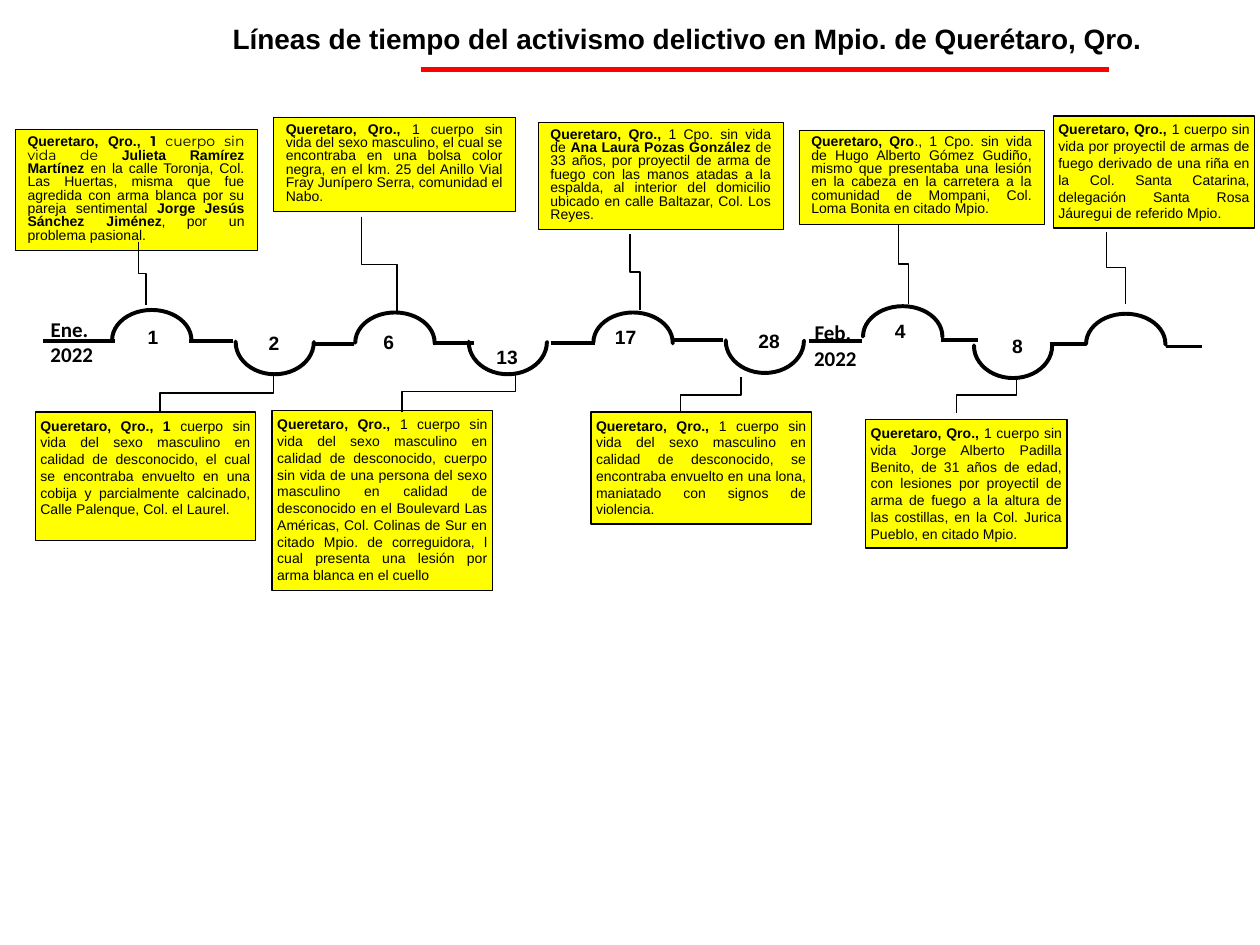
from dataclasses import dataclass
from typing import NamedTuple

from lxml.etree import SubElement
from pptx import Presentation
from pptx.dml.color import RGBColor
from pptx.enum.shapes import MSO_CONNECTOR, MSO_SHAPE
from pptx.enum.text import MSO_ANCHOR, PP_ALIGN
from pptx.oxml.ns import qn
from pptx.util import Inches, Pt


@dataclass(frozen=True)
class Theme:
    ink: RGBColor = RGBColor(0, 0, 0)
    card: RGBColor = RGBColor(0xFF, 0xFF, 0)
    accent: RGBColor = RGBColor(0xFF, 0, 0)
    body: str = "Arial"
    month: str = "Calibri"
    alternate: str = "Montserrat"
    title_size: float = 16
    day_size: float = 11
    month_size: float = 12
    event_size: float = 8
    rule_line: float = 3
    wave_line: float = 2.25
    thin_line: float = 0.75
    hair_line: float = 0.25


THEME = Theme()
COLUMNS, ROWS = 100, 75
WIDTH, HEIGHT = Inches(10), Inches(7.5)


class Run(NamedTuple):
    text: str
    bold: bool = False
    font: str = THEME.body


class Card(NamedTuple):
    box: tuple
    runs: tuple
    compact: bool = False


PLACE = Run("Queretaro, Qro., ", True)

CARDS = [
    Card((1.2, 10.3, 19.2, 9.6), (
        PLACE,
        Run("1", True, THEME.alternate),
        Run(" cuerpo sin vida de ", False, THEME.alternate),
        Run("Julieta Ramírez Martínez", True),
        Run(" en la calle Toronja, Col. Las Huertas, misma que fue agredida con arma "
            "blanca por su pareja sentimental "),
        Run("Jorge Jesús Sánchez Jiménez", True),
        Run(", ", False, THEME.alternate),
        Run("por un problema pasional.")), True),
    Card((21.7, 9.3, 19.2, 7.5), (
        PLACE,
        Run("1 cuerpo sin vida del sexo masculino, el cual se encontraba en una bolsa color "
            "negra, en el km. 25 del Anillo Vial Fray Junípero Serra, comunidad el Nabo.")), True),
    Card((42.7, 9.7, 19.5, 8.5), (
        PLACE,
        Run("1 Cpo. sin vida de "),
        Run("Ana Laura Pozas González", True),
        Run(" de 33 años, por proyectil de arma de fuego con las manos atadas a la espalda, "
            "al interior del domicilio ubicado en calle Baltazar, Col. Los Reyes.")), True),
    Card((63.4, 10.3, 19.5, 7.5), (
        Run("Queretaro, Qro", True),
        Run("., 1 Cpo. sin vida de Hugo Alberto Gómez Gudiño, mismo que presentaba una "
            "lesión en la cabeza en la carretera a la comunidad de Mompani, Col. Loma "
            "Bonita en citado Mpio.")), True),
    Card((83.6, 9.2, 16, 8.9), (
        PLACE,
        Run("1 cuerpo sin vida por proyectil de armas de fuego derivado de una riña en la "
            "Col. Santa Catarina, delegación Santa Rosa Jáuregui de referido Mpio."))),
    Card((2.8, 32.7, 17.5, 10.2), (
        Run("Queretaro, Qro., 1", True),
        Run(" cuerpo sin vida del sexo masculino en calidad de desconocido, el cual se "
            "encontraba envuelto en una cobija y parcialmente calcinado, Calle Palenque, "
            "Col. el Laurel."))),
    Card((21.6, 32.6, 17.5, 14.3), (
        PLACE,
        Run("1 cuerpo sin vida del sexo masculino en calidad de desconocido, cuerpo sin vida "
            "de una persona del sexo masculino en calidad de desconocido en el Boulevard Las "
            "Américas, Col. Colinas de Sur en citado Mpio. de correguidora, l cual presenta "
            "una lesión por arma blanca en el cuello"))),
    Card((46.9, 32.7, 17.5, 8.9), (
        PLACE,
        Run("1 cuerpo sin vida del sexo masculino en calidad de desconocido, se encontraba "
            "envuelto en una lona, maniatado con signos de violencia."))),
    Card((68.7, 33.3, 16, 10.2), (
        PLACE,
        Run("1 cuerpo sin vida Jorge Alberto Padilla Benito, de 31 años de edad, con lesiones "
            "por proyectil de arma de fuego a la altura de las costillas, en la Col. Jurica "
            "Pueblo, en citado Mpio."))),
]

# Left column and top row
CRESTS = [(8.9, 24.6), (28.2, 24.8), (47.1, 24.8), (68.5, 24.3), (86.2, 24.9)]
TROUGHS = [(18.7, 24.6), (37.2, 24.6), (57.6, 24.5), (77.3, 24.9)]
DAYS = [("1", 8.6, 25.4), ("2", 18.2, 25.9), ("6", 27.3, 25.8), ("13", 36.7, 27),
        ("17", 46.1, 25.4), ("28", 57.5, 25.7), ("4", 67.9, 24.9), ("8", 77.2, 26.1)]
MONTHS = [("Ene. ", 1.2, 24.6), ("Feb. ", 61.8, 24.9)]

# Start column, end column, row
LINKS = [(3.4, 9.1, 27.1), (15, 18.5, 27.1), (24.9, 28.1, 27.3), (34.4, 37.6, 27.2),
         (43.7, 47.2, 27.2), (53.5, 57.4, 27), (64.2, 68.4, 27.1), (74.7, 77.6, 27),
         (83.3, 86.2, 27.3), (92.5, 95.4, 27.5)]

# Upper end, then lower end
LEADERS = [(11, 19.2, 11.6, 24.2), (28.7, 17.2, 31.5, 24.8), (50, 18.6, 50.8, 24.6),
           (71.3, 17.8, 72.1, 24.1), (87.8, 18.4, 89.3, 24.1), (21.7, 29.6, 12.7, 32.8),
           (40.9, 29.5, 31.9, 32.7), (58.8, 29.9, 54, 32.8), (80.7, 29.9, 75.9, 32.8)]


def col(count):
    return round(WIDTH * count / COLUMNS)


def row(count):
    return round(HEIGHT * count / ROWS)


def area(left, top, width, height):
    return col(left), row(top), col(width), row(height)


def write(shape, paragraphs, *, size, align=PP_ALIGN.CENTER, inset=(0.04, 0.04), spacing=None):
    """Fill a shape with paragraphs, each a sequence of Run; inset is (sides, ends) in inches."""
    frame = shape.text_frame
    frame.word_wrap = True
    frame.vertical_anchor = MSO_ANCHOR.TOP
    frame.margin_left = frame.margin_right = Inches(inset[0])
    frame.margin_top = frame.margin_bottom = Inches(inset[1])
    for index, runs in enumerate(paragraphs):
        paragraph = frame.add_paragraph() if index else frame.paragraphs[0]
        paragraph.alignment = align
        paragraph.space_before = Pt(0)
        paragraph.line_spacing = spacing
        for item in runs:
            run = paragraph.add_run()
            run.text = item.text
            run.font.size = Pt(size)
            run.font.bold = item.bold
            run.font.name = item.font
            run.font.color.rgb = THEME.ink


def add_title(slide, text):
    title = slide.shapes.title
    title.left, title.top, title.width, title.height = area(12.4, 1.7, 84.3, 2.7)
    write(title, [[Run(text, True)]], size=THEME.title_size, inset=(0, 0), spacing=1)


def add_label(slide, box, paragraphs, **style):
    write(slide.shapes.add_textbox(*area(*box)), paragraphs, **style)


def add_line(slide, kind, ends, color, weight):
    line = slide.shapes.add_connector(kind, *ends)
    line.line.color.rgb = color
    line.line.width = Pt(weight)
    SubElement(line._element.spPr, qn("a:effectLst"))
    return line


def add_level(slide, start, end, level, color=THEME.ink, weight=THEME.wave_line):
    ends = col(start), row(level), col(end), row(level)
    add_line(slide, MSO_CONNECTOR.STRAIGHT, ends, color, weight)


def add_leader(slide, x1, y1, x2, y2):
    """Elbow that leaves and arrives vertically: a horizontal one turned about its centre."""
    run, drop = col(abs(x2 - x1)), row(y2 - y1)
    left = col((x1 + x2) / 2) - drop // 2
    top = row((y1 + y2) / 2) - run // 2
    leader = add_line(slide, MSO_CONNECTOR.ELBOW, (left, top, left + drop, top + run),
                      THEME.ink, THEME.thin_line)
    xfrm = leader._element.spPr.find(qn("a:xfrm"))
    rightward = x2 > x1
    xfrm.set("rot", str((270 if rightward else 90) * 60000))
    if rightward:
        xfrm.set("flipH", "1")


def add_shape(slide, kind, box, weight):
    shape = slide.shapes.add_shape(kind, *area(*box))
    shape.shadow.inherit = False
    shape.line.color.rgb = THEME.ink
    shape.line.width = Pt(weight)
    return shape


def add_arc(slide, box, rotation=0):
    arc = add_shape(slide, MSO_SHAPE.BLOCK_ARC, box, THEME.wave_line)
    arc.fill.background()
    arc.adjustments[0], arc.adjustments[1], arc.adjustments[2] = 108, 0.54, 0
    arc.rotation = rotation


def add_card(slide, card):
    shape = add_shape(slide, MSO_SHAPE.RECTANGLE, card.box,
                      THEME.hair_line if card.compact else THEME.thin_line)
    shape.fill.solid()
    shape.fill.fore_color.rgb = THEME.card
    write(shape, [card.runs], size=THEME.event_size, align=PP_ALIGN.JUSTIFY,
          inset=(0.1, 0.05) if card.compact else (0.04, 0.04),
          spacing=0.8 if card.compact else None)


def main():
    deck = Presentation()
    deck.slide_width, deck.slide_height = WIDTH, HEIGHT
    slide = deck.slides.add_slide(deck.slide_layouts[5])
    add_title(slide, "Líneas de tiempo del activismo delictivo en Mpio. de Querétaro, Qro.")
    add_level(slide, 33.4, 88, 5.5, THEME.accent, THEME.rule_line)
    for left, top in CRESTS:
        add_arc(slide, (left, top, 6.3, 4.8))
    for left, top in TROUGHS:
        add_arc(slide, (left, top, 6.2, 5.1), rotation=180)
    for link in LINKS:
        add_level(slide, *link)
    for card in CARDS:
        add_card(slide, card)
    for leader in LEADERS:
        add_leader(slide, *leader)
    for day, left, top in DAYS:
        add_label(slide, (left, top, 7.1, 2.6), [[Run(day, True)]], size=THEME.day_size)
    for month, left, top in MONTHS:
        lines = [[Run(text, True, THEME.month)] for text in (month, "2022")]
        add_label(slide, (left, top, 9, 5), lines, size=THEME.month_size, inset=(0.1, 0.05))
    deck.save("out.pptx")


if __name__ == "__main__":
    main()
